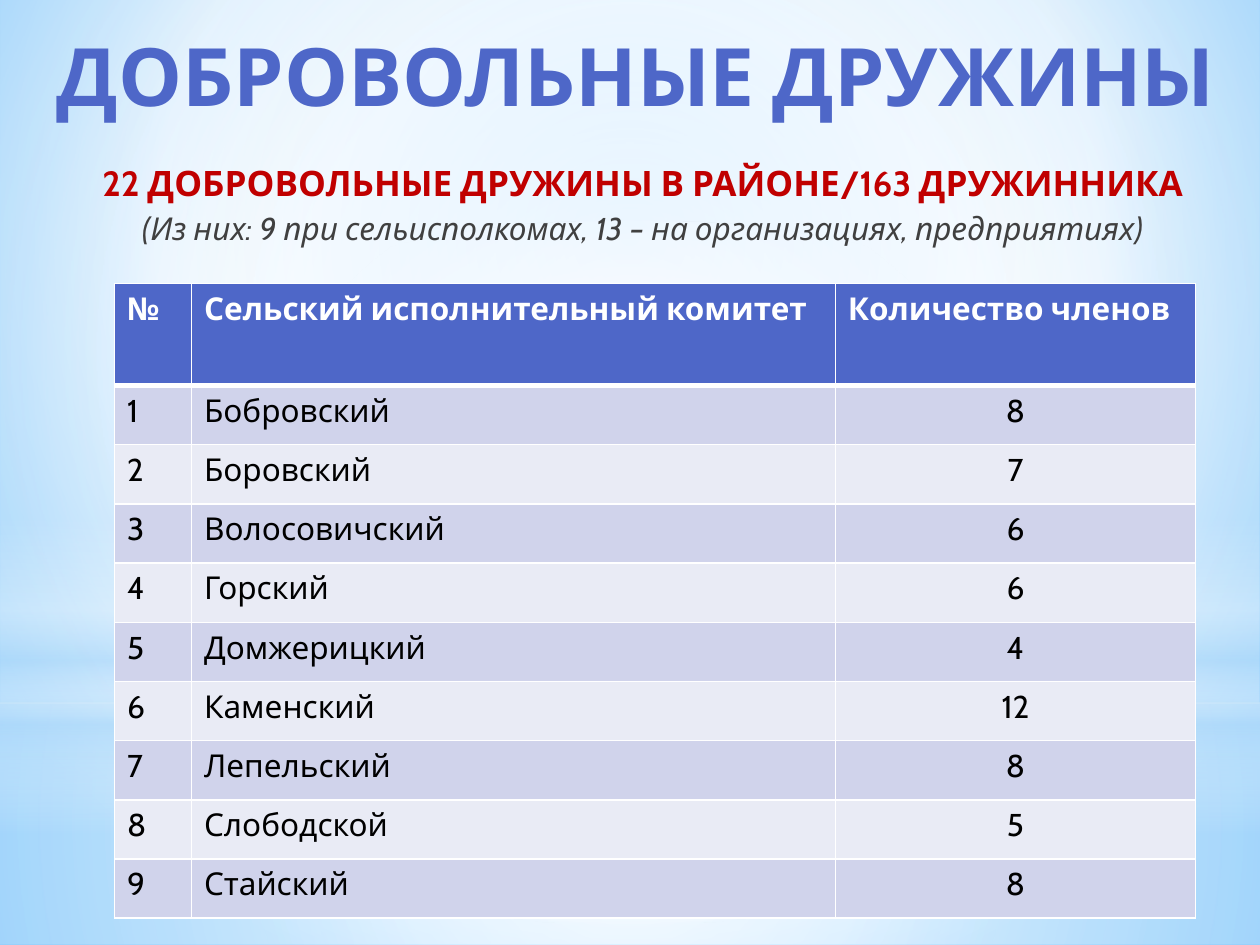
"""Build a one-slide deck that lists volunteer squads by rural committee."""
import dataclasses

import pptx
import pptx.dml.color
import pptx.enum.shapes
import pptx.enum.text
import pptx.oxml
import pptx.oxml.ns
import pptx.util

Inches = pptx.util.Inches
Pt = pptx.util.Pt
Align = pptx.enum.text.PP_ALIGN
Shape = pptx.enum.shapes.MSO_SHAPE
qn = pptx.oxml.ns.qn


@dataclasses.dataclass(frozen=True)
class Theme:
    """Colours, font and type sizes of the slide."""
    font: str = "Cabin"
    accent: str = "4E67C8"
    alert: str = "C00000"
    muted: str = "404040"
    ink: str = "000000"
    white: str = "FFFFFF"
    sky: str = "B4DCFA"
    edge: str = "5BB9FF"
    light_edge: str = "9ED5FF"
    bands: tuple = ("D0D3EB", "E9EBF5")
    title: int = 46
    headline: int = 20
    text: int = 18


THEME = Theme()
CENTRE = (50, 50, 50, 50)
COMMITTEES = [
    ("Бобровский", 8), ("Боровский", 7), ("Волосовичский", 6),
    ("Горский", 6), ("Домжерицкий", 4), ("Каменский", 12),
    ("Лепельский", 8), ("Слободской", 5), ("Стайский", 8),
]


def rgb(colour):
    """Turn a hex string into a colour."""
    return pptx.dml.color.RGBColor.from_string(colour)


def set_gradient(parent, stops, focus=None, angle=90):
    """Swap the solid fill for a radial gradient, or a linear one without focus."""
    marks = "".join(
        f'<a:gs pos="{pos * 1000}"><a:srgbClr val="{colour}">'
        f'<a:alpha val="{opacity * 1000}"/></a:srgbClr></a:gs>'
        for pos, colour, opacity in stops)
    if focus:
        sides = " ".join(f'{side}="{value * 1000}"' for side, value in zip("ltrb", focus))
        shade = f'<a:path path="circle"><a:fillToRect {sides}/></a:path>'
    else:
        shade = f'<a:lin ang="{angle * 60000}" scaled="0"/>'
    gradient = pptx.oxml.parse_xml(
        f'<a:gradFill {pptx.oxml.ns.nsdecls("a")} rotWithShape="1">'
        f'<a:gsLst>{marks}</a:gsLst>{shade}</a:gradFill>')
    parent.replace(parent.find(qn("a:solidFill")), gradient)


def add_glow(slide, box, kind, stops, focus=None):
    """Add one translucent layer of the backdrop."""
    glow = slide.shapes.add_shape(kind, *map(Inches, box))
    glow.shadow.inherit = False
    glow.line.fill.background()
    glow.fill.solid()
    set_gradient(glow.element.spPr, stops, focus)


def add_backdrop(slide, box):
    """Paint the sky background and its layers of light."""
    left, top, width, height = box
    white, sky = THEME.white, THEME.sky
    slide.background.fill.solid()
    set_gradient(next(slide.element.iter(qn("p:bgPr"))),
                 [(0, THEME.light_edge, 100), (60, white, 100), (100, THEME.edge, 100)],
                 (20, 10, 20, 60))
    horizon = 5.58
    add_glow(slide, (left, top + horizon, width, height - horizon), Shape.RECTANGLE,
             [(0, white, 91), (37, white, 76), (100, sky, 79)], CENTRE)
    add_glow(slide, (left, top, width, horizon), Shape.RECTANGLE,
             [(0, white, 89), (48, white, 62), (100, sky, 79)], CENTRE)
    add_glow(slide, (left, top + 4.12, width, 2.5), Shape.RECTANGLE,
             [(0, white, 0), (29, white, 30), (45, sky, 40),
              (55, white, 26), (65, sky, 60), (100, white, 0)])
    add_glow(slide, (left, top + 1.75, width, horizon), Shape.OVAL,
             [(0, white, 100), (56, white, 0)], CENTRE)


def write(paragraph, text, size, colour, bold=False, italic=False, align=Align.CENTER):
    """Add one styled run to a paragraph."""
    paragraph.alignment = align
    run = paragraph.add_run()
    run.text = text
    font = run.font
    font.name, font.size, font.bold, font.italic = THEME.font, Pt(size), bold, italic
    font.color.rgb = rgb(colour)


def add_title(slide, box):
    """Add the slide title."""
    frame = slide.shapes.add_textbox(*map(Inches, box)).text_frame
    frame.word_wrap = True
    frame.margin_top = 0
    write(frame.paragraphs[0], "ДОБРОВОЛЬНЫЕ ДРУЖИНЫ", THEME.title, THEME.accent, bold=True)


def add_summary(slide, box):
    """Add the totals and their breakdown."""
    frame = slide.shapes.add_textbox(*map(Inches, box)).text_frame
    frame.word_wrap = True
    frame.margin_left = Inches(0.15)
    totals = frame.paragraphs[0]
    totals.space_after = Pt(3.5)
    write(totals, "22 ДОБРОВОЛЬНЫЕ ДРУЖИНЫ В РАЙОНЕ/163 ДРУЖИННИКА",
          THEME.headline, THEME.alert, bold=True)
    write(frame.add_paragraph(),
          "(Из них: 9 при сельисполкомах, 13 – на организациях, предприятиях)",
          THEME.text, THEME.muted, italic=True)


def set_borders(cell, top, bottom):
    """Draw white cell borders of the given top and bottom widths."""
    properties = cell._tc.get_or_add_tcPr()
    widths = {"L": 1, "R": 1, "T": top, "B": bottom}
    for index, (side, width) in enumerate(widths.items()):
        properties.insert(index, pptx.oxml.parse_xml(
            f'<a:ln{side} {pptx.oxml.ns.nsdecls("a")} w="{Pt(width)}"><a:solidFill>'
            f'<a:srgbClr val="{THEME.white}"/></a:solidFill></a:ln{side}>'))


def add_committees(slide, box):
    """Add the table of committees and member counts."""
    rows = [("№", "Сельский исполнительный комитет", "Количество членов")]
    rows += [(str(number), name, str(members))
             for number, (name, members) in enumerate(COMMITTEES, 1)]
    table = slide.shapes.add_table(len(rows), 3, *map(Inches, box)).table
    for column, width in zip(table.columns, (0.61, 5.11, 2.86)):
        column.width = Inches(width)
    header_height = 0.81
    row_height = (box[3] - header_height) / len(COMMITTEES)
    for r, values in enumerate(rows):
        header = r == 0
        table.rows[r].height = Inches(header_height if header else row_height)
        for c, value in enumerate(values):
            cell = table.cell(r, c)
            cell.fill.solid()
            cell.fill.fore_color.rgb = rgb(THEME.accent if header else THEME.bands[(r - 1) % 2])
            set_borders(cell, top=3 if r == 1 else 1, bottom=3 if header else 1)
            write(cell.text_frame.paragraphs[0], value, THEME.text,
                  THEME.white if header else THEME.ink, bold=header,
                  align=Align.CENTER if c == 2 and not header else Align.LEFT)


def main():
    """Build and save the deck."""
    deck = pptx.Presentation()
    deck.slide_width, deck.slide_height = Inches(10), Inches(7.5)
    slide = deck.slides.add_slide(deck.slide_layouts[6])
    add_backdrop(slide, (0, 0, 10, 7.5))
    add_title(slide, (0.2, 0.21, 9.69, 1.02))
    add_summary(slide, (0.43, 1.23, 9.29, 5.91))
    add_committees(slide, (0.91, 2.25, 8.58, 5.04))
    deck.save("out.pptx")


if __name__ == "__main__":
    main()
